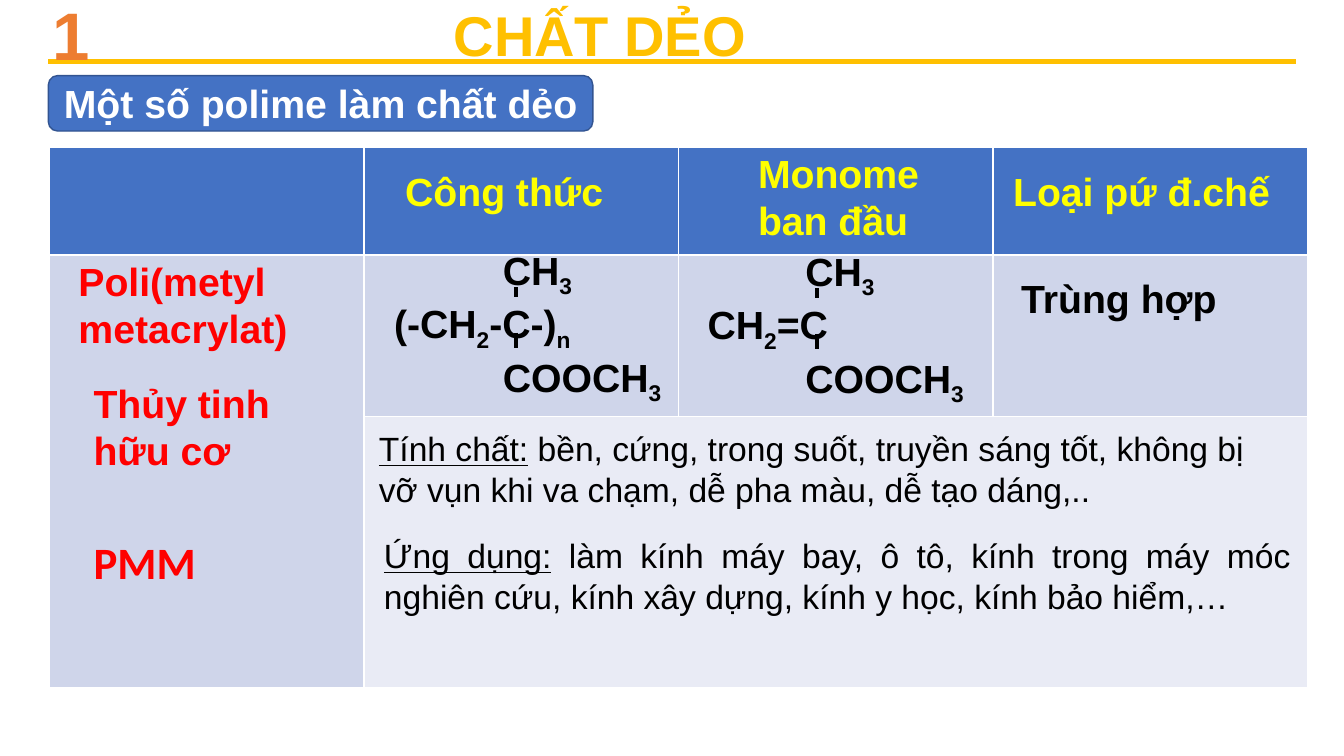
import pptx
import pptx.dml.color
import pptx.enum.shapes
import pptx.enum.text
import pptx.oxml.ns
import pptx.util
from lxml import etree

PX = 9144  # 100 px to the inch
BLACK, RED, YELLOW, GOLD, BLUE = "000000", "FF0000", "FFFF00", "FFC000", "4472C4"
color = pptx.dml.color.RGBColor.from_string
align = pptx.enum.text.PP_ALIGN
anchor = pptx.enum.text.MSO_ANCHOR


def write(frame, paragraphs, size, text_color, font="Arial", bold=True):
    """Fill a text frame; each paragraph is a list of span texts."""
    frame.word_wrap = True
    frame.auto_size = pptx.enum.text.MSO_AUTO_SIZE.SHAPE_TO_FIT_TEXT
    for index, spans in enumerate(paragraphs):
        para = frame.add_paragraph() if index else frame.paragraphs[0]
        for text in spans:
            span = para.add_run()
            span.text = text
            span.font.name = font
            span.font.size = pptx.util.Pt(size)
            span.font.bold = bold
            span.font.color.rgb = color(text_color)


def add_line(shapes, x1, y1, x2, y2, line_color):
    line = shapes.add_connector(
        pptx.enum.shapes.MSO_CONNECTOR.STRAIGHT, x1 * PX, y1 * PX, x2 * PX, y2 * PX)
    line.line.color.rgb = color(line_color)
    line.line.width = pptx.util.Pt(3)
    etree.SubElement(line._element.spPr, pptx.oxml.ns.qn("a:effectLst"))


deck = pptx.Presentation()
deck.slide_width, deck.slide_height = 1333 * PX, 750 * PX
page = deck.slides.add_slide(deck.slide_layouts[5])

# Heading
title = page.shapes.title
title.left, title.top, title.width, title.height = 440 * PX, -4 * PX, 352 * PX, 77 * PX
title.text_frame.vertical_anchor = anchor.TOP
write(title.text_frame, [["CHẤT DẺO"]], 40, GOLD)
title.text_frame.paragraphs[0].alignment = align.LEFT
title.text_frame.paragraphs[0].line_spacing = 1.0
add_line(page.shapes, 48, 61, 1285, 61, GOLD)

badge = page.shapes.add_shape(
    pptx.enum.shapes.MSO_SHAPE.ROUNDED_RECTANGLE, 48 * PX, 75 * PX, 540 * PX, 55 * PX)
badge.shadow.inherit = False
badge.fill.solid()
badge.fill.fore_color.rgb = color(BLUE)
badge.line.color.rgb = color("325491")
badge.line.width = pptx.util.Pt(1)
write(badge.text_frame, [["Một số polime làm chất dẻo"]], 28, "FFFFFF")
badge.text_frame.auto_size = pptx.enum.text.MSO_AUTO_SIZE.NONE
badge.text_frame.vertical_anchor = anchor.MIDDLE
badge.text_frame.paragraphs[0].alignment = align.CENTER

# Table grid: header, polymer row, properties row
row_heights = [107, 160, 269]
row_fills = [BLUE, "CFD5EA", "E9EBF5"]
table = page.shapes.add_table(
    3, 4, 49 * PX, 146 * PX, 4 * 312 * PX, sum(row_heights) * PX).table
for row, height, fill in zip(table.rows, row_heights, row_fills):
    row.height = height * PX
    for cell in row.cells:
        cell.fill.solid()
        cell.fill.fore_color.rgb = color(fill)
table.cell(1, 0).merge(table.cell(2, 0))
table.cell(2, 1).merge(table.cell(2, 3))

# Labels over the grid: text, left, top, width, height, size, colour, font
labels = [
    ("1", 42, -12, 70, 91, 48, "ED7D31", "Arial"),
    ("Công thức", 392, 161, 232, 57, 28, YELLOW, "Arial"),
    ("Monome ban đầu", 742, 143, 232, 104, 28, YELLOW, "Arial"),
    ("Loại pứ đ.chế", 995, 161, 302, 57, 28, YELLOW, "Arial"),
    ("Poli(metyl metacrylat)", 68, 250, 264, 104, 28, RED, "Arial"),
    ("Thủy tinh hữu cơ", 83, 371, 235, 104, 28, RED, "Arial"),
    ("PMM", 83, 526, 205, 64, 32, RED, "Calibri"),
    ("Trùng hợp", 1003, 267, 261, 57, 28, BLACK, "Arial"),
]
for text, left, top, width, height, size, text_color, font in labels:
    box = page.shapes.add_textbox(left * PX, top * PX, width * PX, height * PX)
    write(box.text_frame, [[text]], size, text_color, font)

notes = [
    (366, 420, align.LEFT, "Tính chất:",
     " bền, cứng, trong suốt, truyền sáng tốt, không bị vỡ vụn khi va chạm, "
     "dễ pha màu, dễ tạo dáng,.."),
    (371, 526, align.JUSTIFY, "Ứng dụng:",
     " làm kính máy bay, ô tô, kính trong máy móc nghiên cứu, kính xây dựng, "
     "kính y học, kính bảo hiểm,…"),
]
for left, top, alignment, heading, text in notes:
    box = page.shapes.add_textbox(left * PX, top * PX, 919 * PX, 91 * PX)
    write(box.text_frame, [[heading, text]], 24, BLACK, bold=False)
    para = box.text_frame.paragraphs[0]
    para.alignment = alignment
    para.runs[0].font.underline = True

# Structural formulas: every second span is a subscript
formulas = [
    (381, 239, 108, 512, ["(-CH", "2", "-C-)", "n"]),
    (692, 240, 97, 810, ["CH", "2", "=C"]),
]
for left, top, indent, bond_x, chain in formulas:
    group = page.shapes.add_group_shape()
    box = group.shapes.add_textbox(left * PX, top * PX, 296 * PX, 153 * PX)
    write(box.text_frame, [["CH", "3"], chain, ["COOCH", "3"]], 28, BLACK)
    for para in box.text_frame.paragraphs:
        for span in para.runs[1::2]:
            span.font._element.set("baseline", "-25000")
    for para in box.text_frame.paragraphs[::2]:
        para._p.get_or_add_pPr().set("marL", str(indent * PX))
    for start, end in [(46, 56), (91, 106)]:
        add_line(group.shapes, bond_x, top + start, bond_x, top + end, BLACK)

deck.save("out.pptx")
